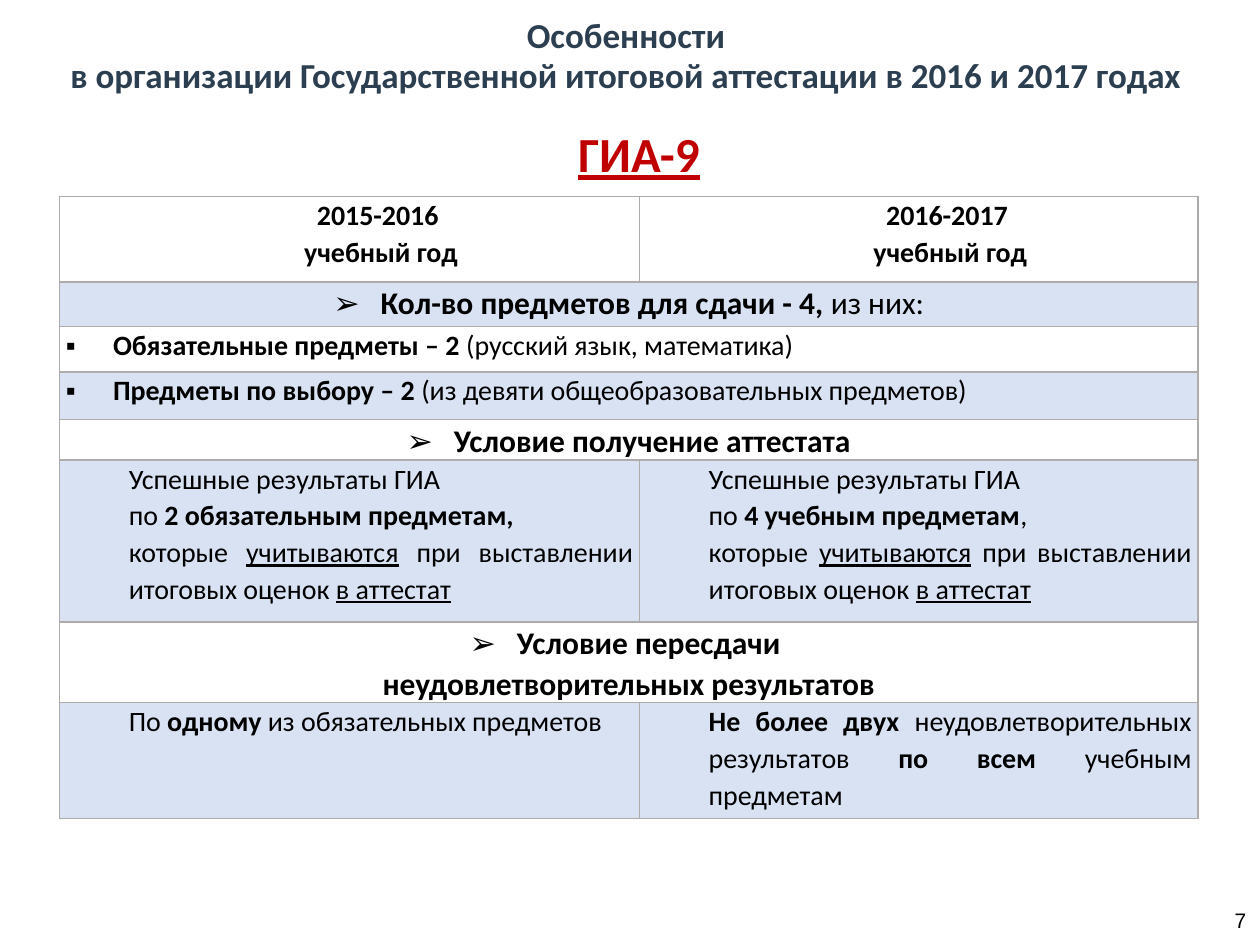
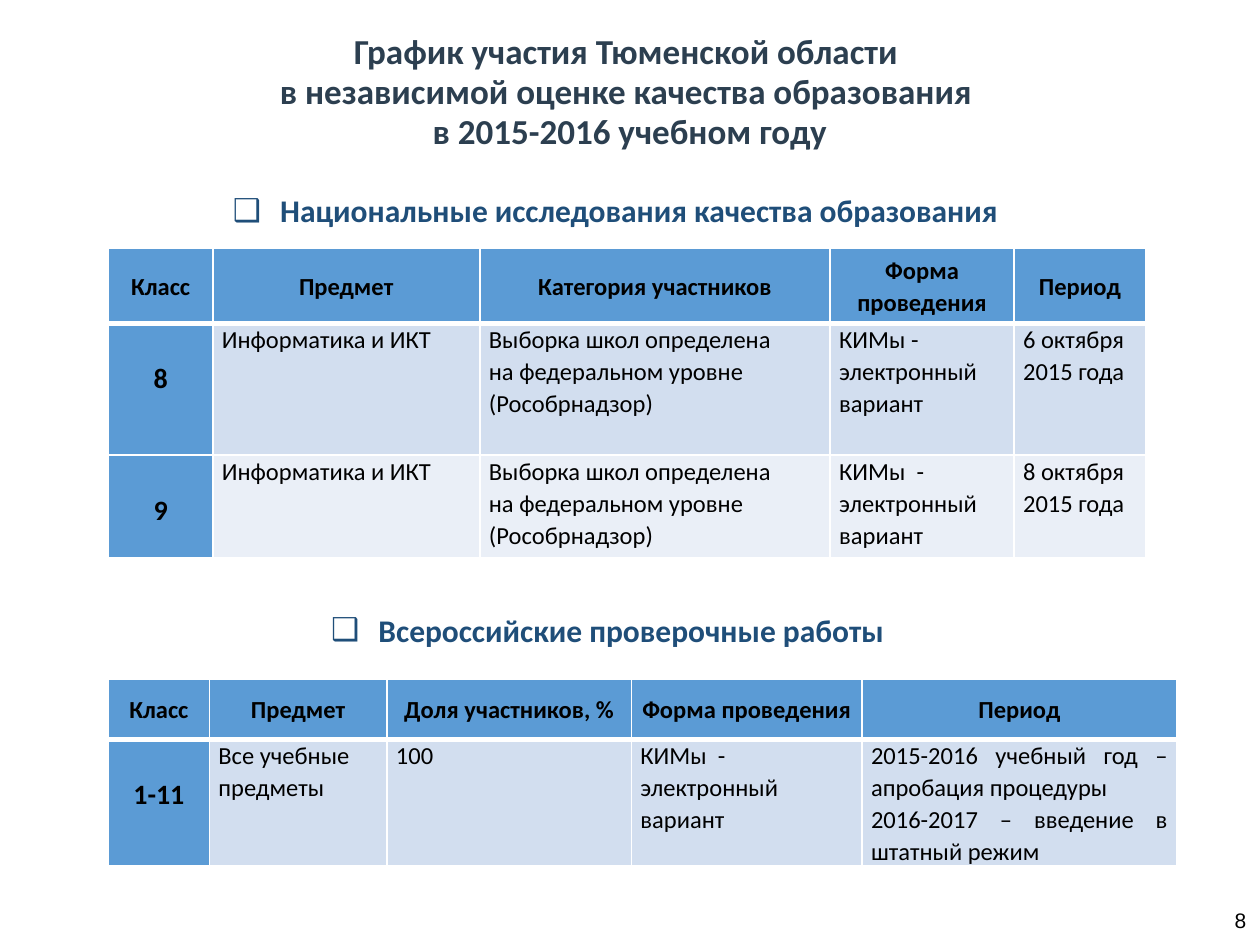
from lxml import etree
from pptx import Presentation
from pptx.dml.color import RGBColor
from pptx.enum import text as t
from pptx.oxml import ns
from pptx.util import Pt

NAVY = RGBColor(0x2C, 0x3F, 0x50)
RED = RGBColor(0xC0, 0x00, 0x00)
DEEP_BLUE = RGBColor(0x1F, 0x4E, 0x79)
BLACK = RGBColor(0x00, 0x00, 0x00)
WHITE = RGBColor(0xFF, 0xFF, 0xFF)
GREY = RGBColor(0xAF, 0xAB, 0xAB)
ACCENT = RGBColor(0x44, 0x72, 0xC4)
HEADER_BLUE = RGBColor(0x5B, 0x9B, 0xD5)
BAND_DARK = RGBColor(0xD2, 0xDE, 0xEF)
BAND_LIGHT = RGBColor(0xEA, 0xEF, 0xF7)
LEFT, CENTER, RIGHT, JUSTIFY = (
    t.PP_ALIGN.LEFT, t.PP_ALIGN.CENTER, t.PP_ALIGN.RIGHT, t.PP_ALIGN.JUSTIFY)
TOP, MIDDLE = t.MSO_ANCHOR.TOP, t.MSO_ANCHOR.MIDDLE
GROW = t.MSO_AUTO_SIZE.SHAPE_TO_FIT_TEXT
BULLETS = "➢▪❑"
HANGING = Pt(27)


def write(frame, content, size, color=BLACK, align=LEFT, spacing=1.07, indent=0, face="Calibri"):
    # "*" toggles bold, "_" toggles underline
    for number, line in enumerate(content.split("\n")):
        paragraph = frame.add_paragraph() if number else frame.paragraphs[0]
        for name, value in {"alignment": align, "line_spacing": spacing}.items():
            setattr(paragraph, name, value)
        props = paragraph._p.get_or_add_pPr()
        if line[0] in BULLETS:
            props.set("marL", str(HANGING))
            props.set("indent", str(-HANGING))
            etree.SubElement(props, ns.qn("a:buFont")).set("typeface", "Arial")
            etree.SubElement(props, ns.qn("a:buChar")).set("char", line[0])
            line = line[1:]
        else:
            props.set("marL", str(Pt(indent)))
            props.set("indent", "0")
        for i, part in enumerate(line.split("*")):
            for j, piece in enumerate(part.split("_")):
                if piece:
                    run = paragraph.add_run()
                    run.text = piece
                    run.font.color.rgb = color
                    for name, value in {"name": face, "size": Pt(size), "bold": i % 2 == 1,
                                        "underline": j % 2 == 1}.items():
                        setattr(run.font, name, value)


def dress(cell, fill, line, widths):
    if fill is None:
        cell.fill.background()
    else:
        cell.fill.solid()
        cell.fill.fore_color.rgb = fill
    props = cell._tc.get_or_add_tcPr()
    if fill == ACCENT:
        tint = props.find(".//" + ns.qn("a:srgbClr"))
        etree.SubElement(tint, ns.qn("a:alpha")).set("val", "20000")
    for place, (side, width) in enumerate(widths.items()):
        border = etree.Element(ns.qn("a:ln" + side), w=str(Pt(width)))
        paint = etree.SubElement(border, ns.qn("a:solidFill"))
        etree.SubElement(paint, ns.qn("a:srgbClr")).set("val", str(line))
        props.insert(place, border)


KINDS = {
    "year": dict(size=16, align=CENTER, indent=36),
    "section": dict(size=18, align=CENTER),
    "rule": dict(size=16, align=JUSTIFY, indent=36),
    "head": dict(size=14, align=CENTER),
    "class": dict(size=16, align=CENTER),
    "body": dict(size=14, align=LEFT),
    "period": dict(size=14, align=JUSTIFY),
}
SCHOOLS = "Выборка школ определена\nна федеральном уровне\n(Рособрнадзор)"
GRADED = "которые _учитываются_ при выставлении итоговых оценок _в аттестат_"

SLIDES = [
    dict(
        number="7",
        title=(6, 53, "Особенности \n"
               "в организации Государственной итоговой аттестации в 2016 и 2017 годах "),
        headings=[(21.6, 64.8, 687, 42, 28, RED, CENTER, "*_ГИА-9_*")],
        tables=[dict(
            left=34, top=112.2, line=GREY, rule=1, inset=3.6, columns=[331.4, 319.2],
            rows=[
                (49, None, [("year", "*2015-2016 *\n*учебный год*"),
                            ("year", "*2016-2017 *\n*учебный год*")]),
                (25.5, ACCENT, [("section", "➢*Кол-во предметов для сдачи - 4, *из них:")]),
                (25.8, None, [("rule", "▪*Обязательные предметы – 2 *(русский язык, математика)")]),
                (27.3, ACCENT, [("rule", "▪*Предметы по выбору – 2 *"
                                         "(из девяти общеобразовательных предметов)")]),
                (23.2, None, [("section", "➢*Условие получение аттестата*")]),
                (92.4, ACCENT, [
                    ("rule", "Успешные результаты ГИА \nпо *2 обязательным предметам, *\n" + GRADED),
                    ("rule", "Успешные результаты ГИА \nпо *4 учебным предметам*, \n" + GRADED)]),
                (37.4, None, [("section", "➢*Условие пересдачи *\n"
                                          "*неудовлетворительных результатов*")]),
                (66.2, ACCENT, [
                    ("rule", "По *одному* из обязательных предметов"),
                    ("rule", "*Не более двух *неудовлетворительных результатов "
                             "*по всем *учебным предметам")]),
            ])]),
    dict(
        number="8",
        title=(15, 76, "График участия Тюменской области \n"
               "в независимой оценке качества образования \nв 2015-2016 учебном году"),
        headings=[
            (81.4, 104.4, 540.7, 31, 18, DEEP_BLUE, CENTER,
             "❑*Национальные исследования качества образования*"),
            (182.2, 344.2, 355.7, 31, 18, DEEP_BLUE, LEFT,
             "❑*Всероссийские проверочные работы*")],
        tables=[
            dict(
                left=62, top=141.8, line=WHITE, rule=3, inset=5.2,
                columns=[59.6, 152.6, 200.2, 105.1, 75.4],
                rows=[
                    (43, HEADER_BLUE, [("head", f"*{name}*") for name in (
                        "Класс", "Предмет", "Категория участников", "Форма проведения", "Период")]),
                    (75.4, BAND_DARK, [
                        ("class", "*8*"), ("body", "Информатика и ИКТ"), ("body", SCHOOLS),
                        ("body", "КИМы - электронный вариант"), ("body", "6 октября 2015 года")]),
                    (58.7, BAND_LIGHT, [
                        ("class", "*9*"), ("body", "Информатика и ИКТ"), ("body", SCHOOLS),
                        ("body", "КИМы  - электронный вариант"), ("body", "8 октября 2015 года")]),
                ]),
            dict(
                left=62, top=388.1, line=WHITE, rule=3, inset=5.2,
                columns=[57.6, 101.5, 139.7, 131.8, 180],
                rows=[
                    (34.5, HEADER_BLUE, [("head", f"*{name}*") for name in (
                        "Класс", "Предмет", "Доля участников, %", "Форма проведения", "Период")]),
                    (46, BAND_DARK, [
                        ("class", "*1-11*"), ("body", "Все учебные предметы"), ("body", "100"),
                        ("body", "КИМы  - электронный вариант"),
                        ("period", "2015-2016 учебный год – апробация процедуры\n"
                                   "2016-2017 – введение в штатный режим")]),
                ])]),
]

deck = Presentation()
deck.slide_width, deck.slide_height = Pt(720), Pt(540)

for content in SLIDES:
    slide = deck.slides.add_slide(deck.slide_layouts[5])
    top, height, wording = content["title"]
    title = slide.shapes.title
    for name, value in {"left": 0, "top": Pt(top), "width": Pt(720), "height": Pt(height)}.items():
        setattr(title, name, value)
    for name, value in {"word_wrap": True, "auto_size": GROW, "vertical_anchor": TOP}.items():
        setattr(title.text_frame, name, value)
    write(title.text_frame, "\n".join(f"*{line}*" for line in wording.split("\n")),
          20, NAVY, CENTER, 0.95)

    for left, top, width, height, size, color, align, wording in content["headings"]:
        heading = slide.shapes.add_textbox(Pt(left), Pt(top), Pt(width), Pt(height)).text_frame
        for name, value in {"word_wrap": True, "auto_size": GROW}.items():
            setattr(heading, name, value)
        write(heading, wording, size, color, align)

    for plan in content["tables"]:
        columns, rows = plan["columns"], plan["rows"]
        table = slide.shapes.add_table(
            len(rows), len(columns), Pt(plan["left"]), Pt(plan["top"]),
            Pt(sum(columns)), Pt(sum(row[0] for row in rows))).table
        table.first_row = table.horz_banding = False
        for column, width in zip(table.columns, columns):
            column.width = Pt(width)
        for r, (height, band, cells) in enumerate(rows):
            table.rows[r].height = Pt(height)
            widths = {"L": 1, "R": 1, "T": plan["rule"] if r == 1 else 1,
                      "B": plan["rule"] if r == 0 else 1}
            for c in range(len(columns)):
                dress(table.cell(r, c), HEADER_BLUE if cells[0][0] == "class" and c == 0 else band,
                      plan["line"], widths)
            if len(cells) == 1:
                table.cell(r, 0).merge(table.cell(r, len(columns) - 1))
            for c, (kind, wording) in enumerate(cells):
                cell = table.cell(r, c)
                for name, value in {
                        "margin_left": Pt(plan["inset"]), "margin_right": Pt(plan["inset"]),
                        "margin_top": Pt(20.5 if kind == "class" else 0), "margin_bottom": 0,
                        "vertical_anchor": MIDDLE if kind == "head" else TOP}.items():
                    setattr(cell, name, value)
                write(cell.text_frame, wording, **KINDS[kind])

    page = slide.shapes.add_textbox(Pt(690.5), Pt(511.2), Pt(28.8), Pt(28.8)).text_frame
    for name, value in {"word_wrap": True, "vertical_anchor": MIDDLE}.items():
        setattr(page, name, value)
    write(page, content["number"], 12, align=RIGHT, spacing=1.0, face="Arial")

deck.save("out.pptx")
